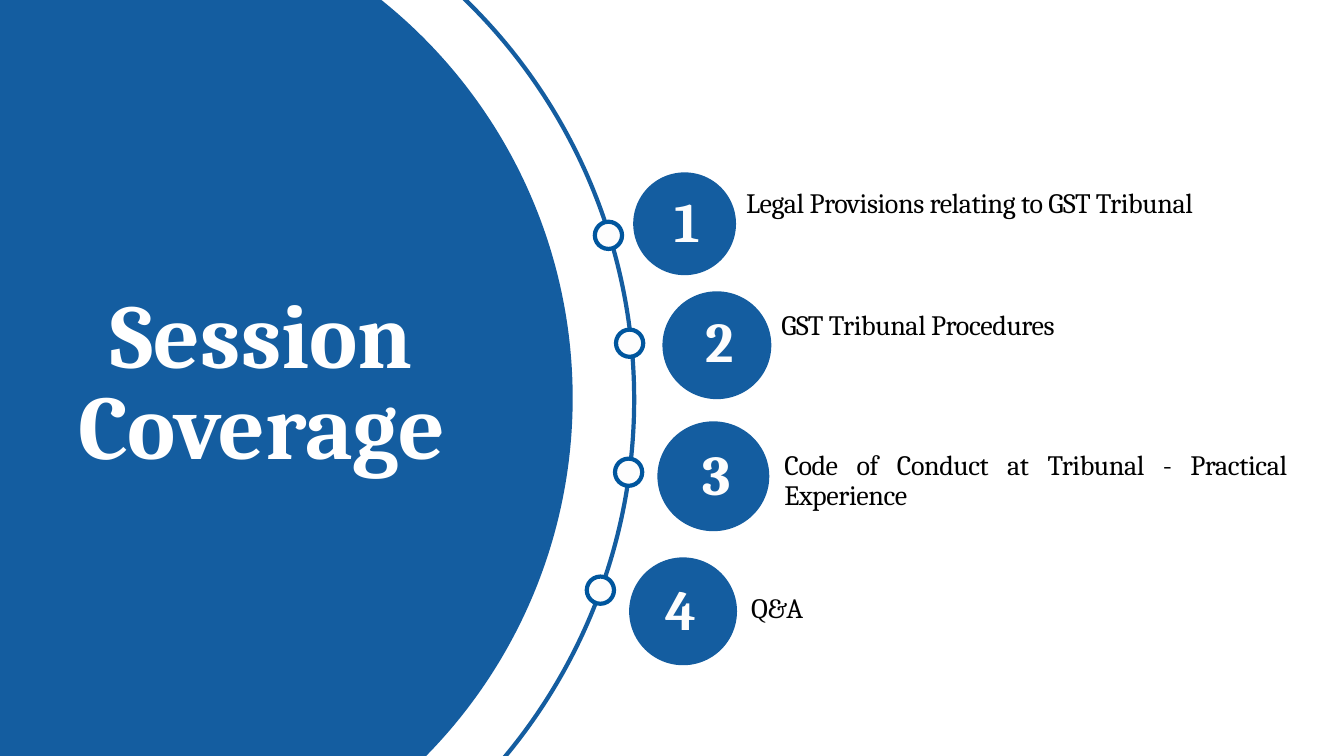
from dataclasses import dataclass

from pptx import Presentation
from pptx.dml.color import RGBColor
from pptx.enum.shapes import MSO_SHAPE
from pptx.enum.text import PP_ALIGN
from pptx.shapes.autoshape import Shape
from pptx.slide import Slide
from pptx.util import Inches, Pt


@dataclass(frozen=True)
class Theme:
    font: str = "Cambria"
    blue: str = "145DA0"
    ring: str = "00569E"
    pale: str = "FDFDFD"
    white: str = "FFFFFF"
    black: str = "000000"
    title_size: float = 65
    title_leading: float = 65.3
    number_size: float = 40
    number_leading: float = 46.7
    topic_size: float = 20
    topic_leading: float = 21.5
    topic_tracking: float = -0.3
    line_width: float = 3


@dataclass(frozen=True)
class Box:
    left: float
    top: float
    width: float
    height: float

    def lengths(self) -> tuple[Inches, Inches, Inches, Inches]:
        return Inches(self.left), Inches(self.top), Inches(self.width), Inches(self.height)


@dataclass(frozen=True)
class Topic:
    text: str
    text_box: Box
    circle: Box
    number_left: float
    number_top: float
    dot_left: float
    dot_top: float
    align: PP_ALIGN = PP_ALIGN.JUSTIFY


THEME = Theme()
DOT_SIZE = 0.27
NUMBER_WIDTH, NUMBER_HEIGHT = 0.83, 0.66
ARC = Box(-4.78, -1.57, 11.07, 11.07)
DISC = Box(-4.44, -1.11, 10.12, 10.12)
TITLE = Box(0.55, 2.93, 4.09, 1.82)
TOPICS = [
    Topic("Legal Provisions relating to GST Tribunal", Box(7.4, 1.88, 5.27, 0.29),
          Box(6.28, 1.71, 1.02, 1.02), 6.4, 1.87, 5.9, 2.2),
    Topic("GST Tribunal Procedures", Box(7.75, 3.09, 4.81, 0.29),
          Box(6.57, 2.89, 1.08, 1.07), 6.72, 3.06, 6.11, 3.27),
    Topic("Code of Conduct at Tribunal - Practical Experience", Box(7.78, 4.47, 4.98, 0.59),
          Box(6.52, 4.18, 1.11, 1.09), 6.69, 4.38, 6.1, 4.55),
    Topic("Q&A", Box(7.45, 5.89, 5.35, 0.29),
          Box(6.24, 5.53, 1.07, 1.07), 6.34, 5.72, 5.82, 5.72, PP_ALIGN.LEFT),
]


def add_oval(slide: Slide, box: Box, fill: str | None = None, line: str | None = None) -> Shape:
    shape = slide.shapes.add_shape(MSO_SHAPE.OVAL, *box.lengths())
    shape.shadow.inherit = False
    if fill:
        shape.fill.solid()
        shape.fill.fore_color.rgb = RGBColor.from_string(fill)
    else:
        shape.fill.background()
    if line:
        shape.line.color.rgb = RGBColor.from_string(line)
        shape.line.width = Pt(THEME.line_width)
    else:
        shape.line.fill.background()
    return shape


def add_text(slide: Slide, text: str, box: Box, *, size: float, leading: float, color: str,
             align: PP_ALIGN = PP_ALIGN.CENTER, bold: bool = False, tracking: float = 0) -> Shape:
    shape = slide.shapes.add_textbox(*box.lengths())
    frame = shape.text_frame
    frame.word_wrap = True
    frame.margin_left = frame.margin_top = frame.margin_right = frame.margin_bottom = 0
    frame.text = text
    for paragraph in frame.paragraphs:
        paragraph.alignment = align
        paragraph.line_spacing = Pt(leading)
        for run in paragraph.runs:
            run.font.name = THEME.font
            run.font.size = Pt(size)
            run.font.bold = bold
            run.font.color.rgb = RGBColor.from_string(color)
            if tracking:
                run.font._element.set("spc", str(round(tracking * 100)))
    return shape


def add_topic(slide: Slide, number: int, topic: Topic) -> None:
    add_oval(slide, topic.circle, fill=THEME.blue)
    add_text(slide, str(number),
             Box(topic.number_left, topic.number_top, NUMBER_WIDTH, NUMBER_HEIGHT),
             size=THEME.number_size, leading=THEME.number_leading, color=THEME.pale, bold=True)
    add_oval(slide, Box(topic.dot_left, topic.dot_top, DOT_SIZE, DOT_SIZE),
             fill=THEME.pale, line=THEME.ring)
    add_text(slide, topic.text, topic.text_box, size=THEME.topic_size,
             leading=THEME.topic_leading, color=THEME.black, align=topic.align,
             tracking=THEME.topic_tracking)


def main() -> None:
    presentation = Presentation()
    presentation.slide_width = Inches(13.33)
    presentation.slide_height = Inches(7.5)
    slide = presentation.slides.add_slide(presentation.slide_layouts[6])
    add_oval(slide, ARC, line=THEME.blue)
    add_oval(slide, DISC, fill=THEME.blue)
    add_text(slide, "Session\nCoverage", TITLE, size=THEME.title_size,
             leading=THEME.title_leading, color=THEME.white, bold=True)
    for number, topic in enumerate(TOPICS, start=1):
        add_topic(slide, number, topic)
    presentation.save("out.pptx")


if __name__ == "__main__":
    main()
